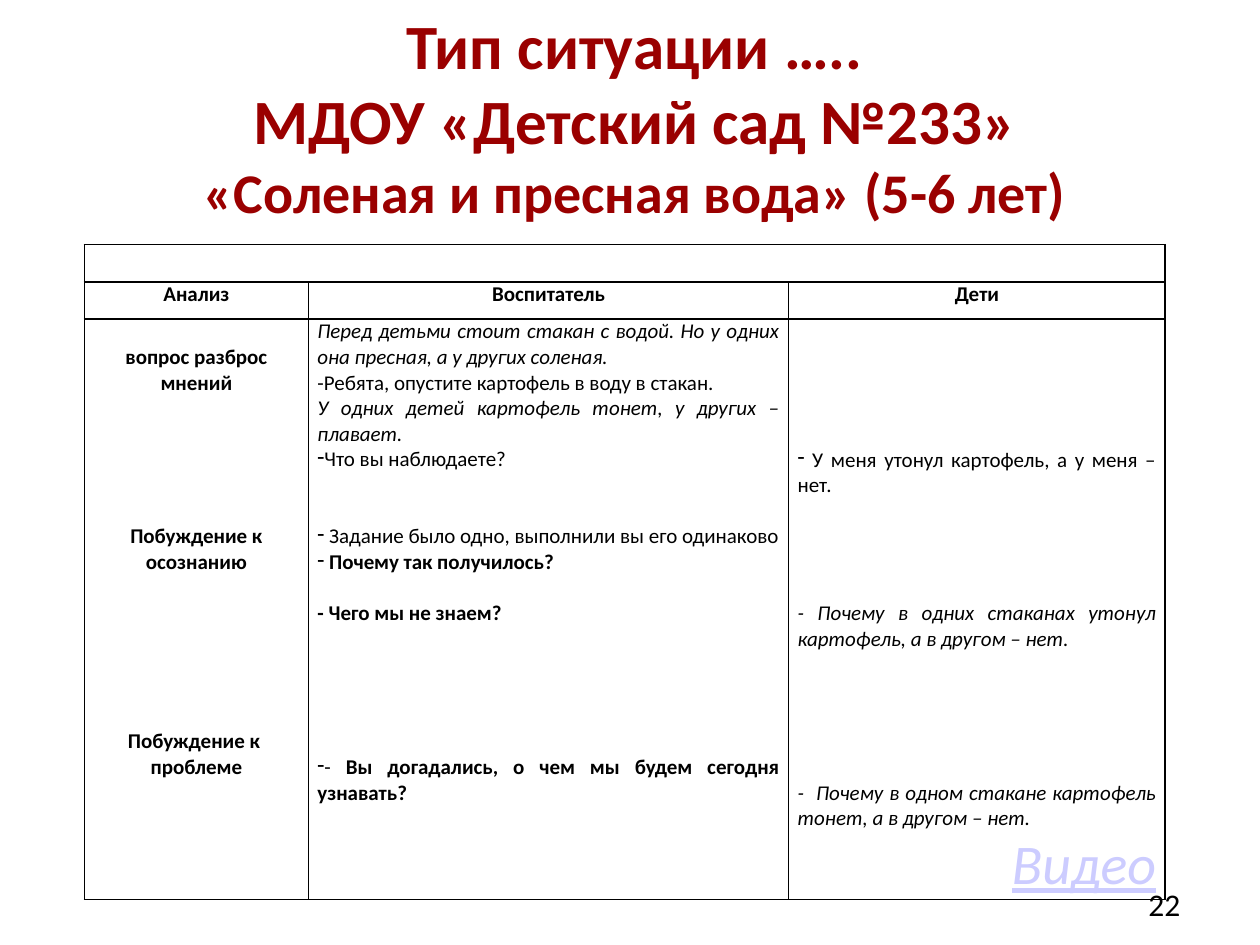
from lxml import etree
from pptx import Presentation
from pptx.dml.color import RGBColor
from pptx.enum.text import MSO_ANCHOR, PP_ALIGN
from pptx.oxml.ns import qn
from pptx.util import Cm, Pt

LEFT, MID, RIGHT, FULL = PP_ALIGN.LEFT, PP_ALIGN.CENTER, PP_ALIGN.RIGHT, PP_ALIGN.JUSTIFY
CENTER = MSO_ANCHOR.MIDDLE
BLACK = RGBColor(0, 0, 0)
RED = RGBColor(0x9A, 0, 0)
LILAC = RGBColor(0xCC, 0xCC, 0xFF)
FONT = "Calibri"
LINE = 14.65

TITLE = [
    ("Тип ситуации …..", 36),
    ("МДОУ «Детский сад №233»", 36),
    ("«Соленая и пресная вода» (5-6 лет)", 32),
]
HEADS = ["Анализ", "Воспитатель", "Дети"]
BOLD, ITAL, DASH = {"bold": True}, {"ital": True}, {"dash": True}
STEPS = [
    (1, "вопрос разброс мнений", BOLD),
    (5, "Побуждение к осознанию", BOLD),
    (6, "Побуждение к  проблеме", BOLD),
]
TUTOR = [
    (0, "Перед детьми стоит стакан с водой. Но у одних она пресная, а у других соленая. ", ITAL),
    (0, "-Ребята, опустите картофель в воду в стакан.", {}),
    (0, "У одних детей картофель тонет, у других – плавает. ", ITAL),
    (0, "Что вы наблюдаете?", DASH),
    (2, " Задание было одно, выполнили вы его одинаково", DASH),
    (0, " Почему так получилось? ", DASH | BOLD),
    (1, "- Чего мы не знаем?", BOLD),
    (5, "Вы догадались, о чем мы будем сегодня узнавать?", DASH | BOLD | {"lead": "- "}),
]
KIDS = [
    (5, " У меня утонул картофель, а у меня – нет.", DASH),
    (4, "- Почему в одних стаканах утонул картофель, а в другом – нет.", ITAL),
    (5, "-  Почему в одном стакане картофель тонет, а в другом – нет.", ITAL),
    (0, "Видео", ITAL | {"size": 32, "color": LILAC, "under": True, "align": RIGHT}),
]
BODY = [(STEPS, MID), (TUTOR, FULL), (KIDS, FULL)]
COLS = [4.52, 9.68, 7.59]
ROWS = [0.75, 0.75, 11.7]


def write(par, text, size=12, color=BLACK, bold=False, ital=False,
          under=False, align=LEFT, dash=False, lead=""):
    par.alignment = align
    if dash:
        props = par._p.get_or_add_pPr()
        etree.SubElement(props, qn("a:buChar"), char="-")
    for part, heavy in ((lead, False), (text, bold)):
        if part:
            run = par.add_run()
            run.text = part
            font = run.font
            font.name, font.size, font.bold = FONT, Pt(size), heavy
            font.italic, font.underline = ital, under
            font.color.rgb = color


def pick(frame, n):
    return frame.add_paragraph() if n else frame.paragraphs[0]


def frame_cell(cell):
    cell.margin_left = cell.margin_right = Cm(0.18)
    cell.margin_top = cell.margin_bottom = 0
    props = cell._tc.get_or_add_tcPr()
    for side in ("lnL", "lnR", "lnT", "lnB"):
        line = etree.SubElement(props, qn("a:" + side), w=str(Pt(1)))
        fill = etree.SubElement(line, qn("a:solidFill"))
        etree.SubElement(fill, qn("a:srgbClr"), val=str(BLACK))
    cell.fill.background()


def add_box(slide, *place):
    frame = slide.shapes.add_textbox(*map(Cm, place)).text_frame
    frame.word_wrap = True
    return frame


def add_grid(slide):
    shape = slide.shapes.add_table(
        len(ROWS), len(COLS), Cm(1.7), Cm(4.93), Cm(sum(COLS)), Cm(sum(ROWS)))
    grid = shape.table
    grid.first_row = grid.horz_banding = False
    for col, width in zip(grid.columns, COLS):
        col.width = Cm(width)
    for row, height in zip(grid.rows, ROWS):
        row.height = Cm(height)
    for cell in grid.iter_cells():
        frame_cell(cell)
    grid.cell(0, 0).merge(grid.cell(0, len(COLS) - 1))
    grid.cell(0, 0).text_frame.paragraphs[0].font.size = Pt(12)
    for c, (head, (items, align)) in enumerate(zip(HEADS, BODY)):
        write(grid.cell(1, c).text_frame.paragraphs[0], head, bold=True, align=MID)
        cell = grid.cell(2, c)
        cell.margin_top = Pt(items[0][0] * LINE)
        for n, (gap, text, form) in enumerate(items):
            par = pick(cell.text_frame, n)
            write(par, text, **({"align": align} | form))
            if n and gap:
                par.space_before = Pt(gap * LINE)


def main():
    deck = Presentation()
    deck.slide_width, deck.slide_height = Cm(25.4), Cm(19.05)
    slide = deck.slides.add_slide(deck.slide_layouts[6])
    title = add_box(slide, 1.1, 0, 23.4, 3.42)
    for n, (text, size) in enumerate(TITLE):
        write(pick(title, n), text, size=size, color=RED, bold=True, align=MID)
    add_grid(slide)
    page = add_box(slide, 22.9, 17.73, 1.23, 1)
    page.vertical_anchor = CENTER
    write(page.paragraphs[0], "22", size=18)
    deck.save("out.pptx")


if __name__ == "__main__":
    main()
